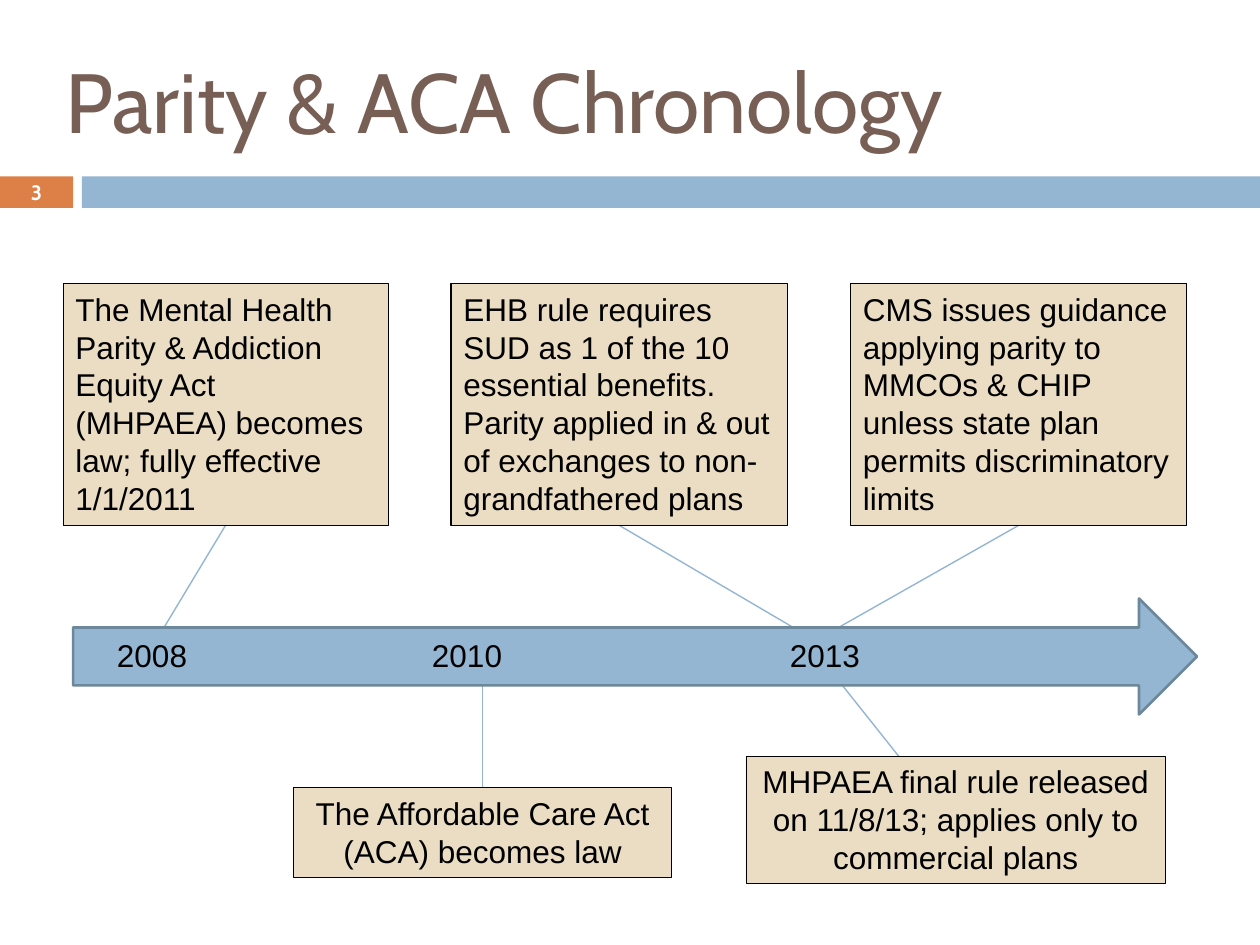
import pptx
import pptx.util
import pptx.dml.color
import pptx.enum.shapes
import pptx.enum.text
import pptx.oxml.ns
import lxml.etree

Inches = pptx.util.Inches
SHAPE = pptx.enum.shapes.MSO_SHAPE
ALIGN = pptx.enum.text.PP_ALIGN
ANCHOR = pptx.enum.text.MSO_ANCHOR

COLORS = {
    "blue": "94B6D2",
    "edge": "6D879B",
    "orange": "DD8047",
    "tan": "EBDDC3",
    "brown": "775F55",
    "black": "000000",
    "white": "FFFFFF",
}


class Deck:
    font = "Arial"
    heading_font = "Cabin"
    size = 18

    def __init__(self, width, height):
        self.prs = pptx.Presentation()
        self.prs.slide_width = Inches(width)
        self.prs.slide_height = Inches(height)

    def color(self, name):
        return pptx.dml.color.RGBColor.from_string(COLORS[name])

    def add_slide(self):
        self.s = self.prs.slides.add_slide(self.prs.slide_layouts[5])

    def set_text(self, sp, text, size=None, font=None, color="black",
                 align=ALIGN.LEFT, anchor=ANCHOR.TOP, bold=False):
        tf = sp.text_frame
        tf.word_wrap = True
        tf.vertical_anchor = anchor
        p = tf.paragraphs[0]
        p.text = text
        p.alignment = align
        p.font.size = pptx.util.Pt(size or self.size)
        p.font.name = font or self.font
        p.font.bold = bold
        p.font.color.rgb = self.color(color)

    def title(self, text, *box):
        sp = self.s.shapes.title
        sp.left, sp.top, sp.width, sp.height = map(Inches, box)
        self.set_text(sp, text, 48, self.heading_font, "brown", anchor=ANCHOR.MIDDLE)

    def shape(self, kind, box, fill, line=None, weight=0.75):
        sp = self.s.shapes.add_shape(kind, *map(Inches, box))
        sp.shadow.inherit = False
        sp.fill.solid()
        sp.fill.fore_color.rgb = self.color(fill)
        if line:
            sp.line.color.rgb = self.color(line)
            sp.line.width = pptx.util.Pt(weight)
        else:
            sp.line.fill.background()
        return sp

    def text(self, text, box, **style):
        self.set_text(self.s.shapes.add_textbox(*map(Inches, box)), text, **style)

    def event(self, text, box, align=ALIGN.LEFT, weight=0.75):
        sp = self.shape(SHAPE.RECTANGLE, box, "tan", "black", weight)
        self.set_text(sp, text, align=align)
        return sp

    def line(self, *ends):
        c = self.s.shapes.add_connector(
            pptx.enum.shapes.MSO_CONNECTOR.STRAIGHT, *map(Inches, ends))
        c.line.color.rgb = self.color("blue")
        c.line.width = pptx.util.Pt(0.79)
        lxml.etree.SubElement(c._element.spPr, pptx.oxml.ns.qn("a:effectLst"))
        return c


def main():
    deck = Deck(10, 7.5)
    deck.add_slide()
    deck.title("Parity & ACA Chronology", 0.42, 0.25, 9, 1.08)
    deck.shape(SHAPE.RECTANGLE, (0, 1.4, 0.58, 0.25), "orange")
    deck.shape(SHAPE.RECTANGLE, (0.65, 1.4, 9.35, 0.25), "blue")
    deck.text("3", (0, 1.39, 0.58, 0.27), size=11.9, font=deck.heading_font,
              color="white", align=ALIGN.CENTER, anchor=ANCHOR.MIDDLE, bold=True)

    mhpaea_line = deck.line(1.29, 5, 1.79, 4.17)
    aca_line = deck.line(3.83, 5.42, 3.83, 6.25)
    ehb_line = deck.line(6.33, 5, 4.92, 4.17)
    cms_line = deck.line(6.62, 5, 8.08, 4.17)
    deck.line(6.67, 5.42, 7.33, 6.25)

    deck.shape(SHAPE.RIGHT_ARROW, (0.58, 4.75, 8.92, 0.92), "blue", "edge", 1.5)
    for year, x in (("2008", 0.83), ("2010", 3.33), ("2013", 6.17)):
        deck.text(year, (x, 5, 0.92, 0.4))

    mhpaea = deck.event(
        "The Mental Health Parity & Addiction Equity Act (MHPAEA) becomes law; "
        "fully effective 1/1/2011", (0.5, 2.25, 2.58, 1.92), weight=0.25)
    ehb = deck.event(
        "EHB rule requires SUD as 1 of the 10 essential benefits. Parity applied "
        "in & out of exchanges to non-grandfathered plans", (3.58, 2.25, 2.67, 1.92))
    cms = deck.event(
        "CMS issues guidance applying parity to MMCOs & CHIP unless state plan "
        "permits discriminatory limits", (6.75, 2.25, 2.67, 1.92))
    aca = deck.event("The Affordable Care Act (ACA) becomes law",
                     (2.33, 6.25, 3, 0.71), ALIGN.CENTER, 0.25)
    deck.event("MHPAEA final rule released on 11/8/13; applies only to commercial plans",
               (5.92, 6, 3.33, 1.01), ALIGN.CENTER, 0.25)

    for connector, box, side in ((mhpaea_line, mhpaea, 2), (ehb_line, ehb, 2),
                                 (cms_line, cms, 2), (aca_line, aca, 0)):
        connector.end_connect(box, side)

    deck.prs.save("out.pptx")


if __name__ == "__main__":
    main()
